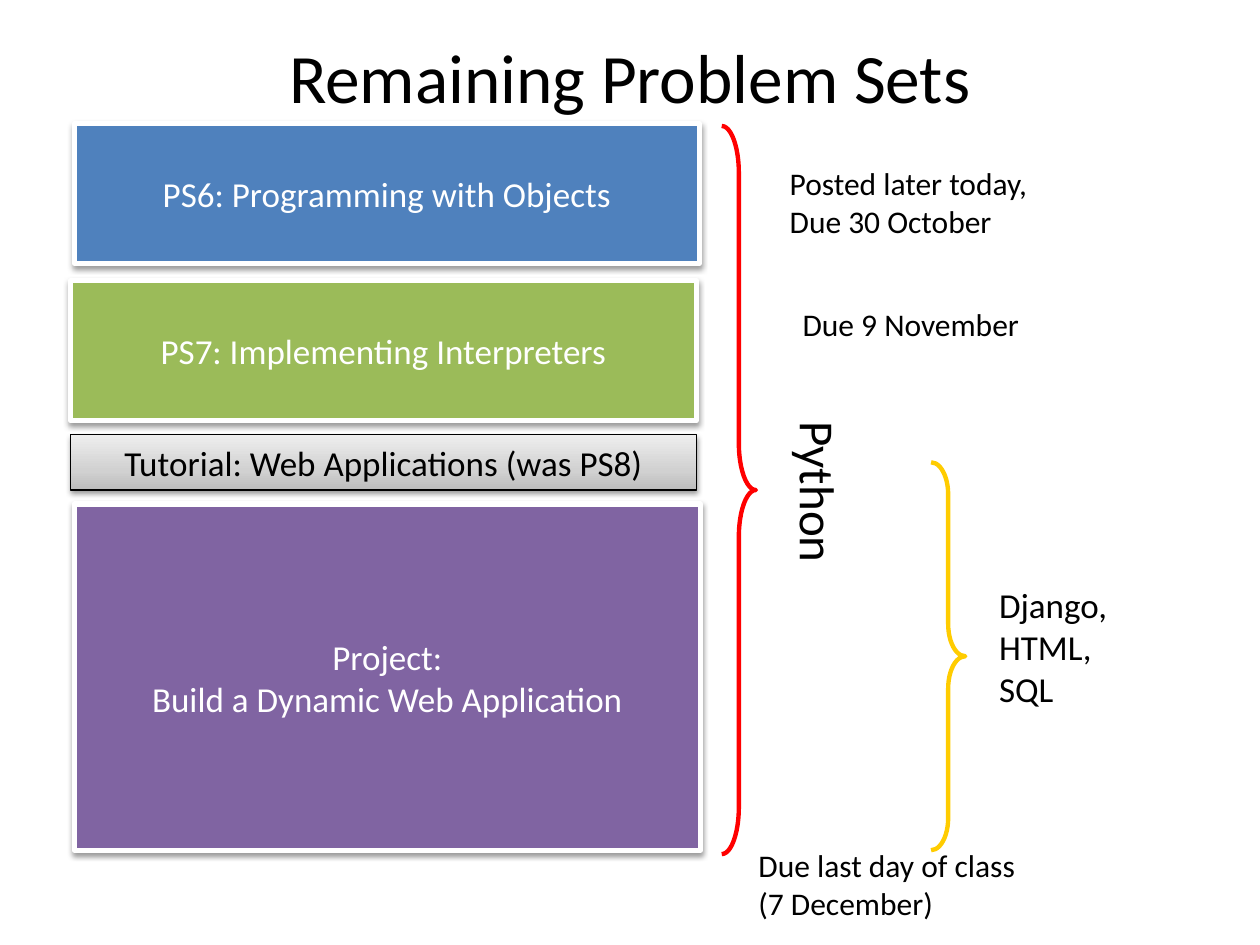
import pptx
import pptx.dml.color
import pptx.enum.shapes
import pptx.enum.text
import pptx.oxml
import pptx.util
from pptx.util import Cm

SHAPES = pptx.enum.shapes.MSO_SHAPE
ALIGN = pptx.enum.text.PP_ALIGN
ANCHOR = pptx.enum.text.MSO_ANCHOR
NAMESPACE = 'xmlns:a="http://schemas.openxmlformats.org/drawingml/2006/main"'

# Places are left, top, width, height in centimetres.
TITLE = ("Remaining Problem Sets", (1.27, 0.64, 22.86, 1.78))
GREY_STOPS = [(0, "BDBDBD"), (35, "D1D1D1"), (100, "EEEEEE")]
# lines, place, fill (colour or gradient stops), border colour, border width, text colour
BLOCKS = [
    (["PS6: Programming with Objects"], (1.5, 2.49, 12.6, 2.82),
     "4F81BD", "FFFFFF", 3, "FFFFFF"),
    (["PS7: Implementing Interpreters"], (1.42, 5.66, 12.62, 2.82),
     "9BBB59", "FFFFFF", 3, "FFFFFF"),
    (["Tutorial: Web Applications (was PS8)"], (1.42, 8.76, 12.62, 1.12),
     GREY_STOPS, "000000", 0.75, "000000"),
    (["Project:", "Build a Dynamic Web Application"], (1.5, 10.16, 12.62, 6.98),
     "8064A2", "FFFFFF", 3, "FFFFFF"),
]
# place, colour, curve size
BRACES = [
    ((14.55, 2.54, 0.69, 14.68), "FF0000", 1.37),
    ((18.77, 9.32, 0.69, 7.82), "FFCC00", 0.94),
]
# lines, place, text size, wrap, rotation, alignment
LABELS = [
    (["Python"], (14.81, 9.19, 3.4, 1.45), 28, False, 90, ALIGN.CENTER),
    (["Django, HTML, SQL"], (19.89, 11.63, 3.4, 2.82), 20, True, 0, ALIGN.LEFT),
    (["Due 9 November"], (15.93, 6.02, 4.93, 1.02), 18, False, 0, ALIGN.LEFT),
    (["Posted later today,", "Due 30 October"], (15.67, 3.18, 5.36, 1.8),
     18, False, 0, ALIGN.LEFT),
    (["Due last day of class (7 December)"], (15.04, 16.94, 5.72, 1.8),
     18, True, 0, ALIGN.LEFT),
]


def color(hex_value):
    return pptx.dml.color.RGBColor.from_string(hex_value)


def lengths(place):
    return [Cm(value) for value in place]


def write(shape, lines, size, hex_value, align, anchor, wrap=True):
    frame = shape.text_frame
    for name, value in {"word_wrap": wrap, "vertical_anchor": anchor,
                        "auto_size": pptx.enum.text.MSO_AUTO_SIZE.NONE}.items():
        setattr(frame, name, value)
    for index, line in enumerate(lines):
        para = frame.add_paragraph() if index else frame.paragraphs[0]
        para.alignment = align
        span = para.add_run()
        span.text = line
        for name, value in {"name": "Calibri", "size": pptx.util.Pt(size)}.items():
            setattr(span.font, name, value)
        span.font.color.rgb = color(hex_value)


def set_line(shape, hex_value, width):
    shape.line.color.rgb = color(hex_value)
    shape.line.width = pptx.util.Pt(width)


def fill_gradient(shape, stops):
    """Fill from the bottom edge upward."""
    shape.fill.gradient()
    shape.fill.gradient_angle = 90
    stop_list = shape.fill._xPr.find(pptx.oxml.ns.qn("a:gradFill")).gsLst
    for stop in list(stop_list):
        stop_list.remove(stop)
    for position, hex_value in stops:
        stop_list.append(pptx.oxml.parse_xml(
            f'<a:gs {NAMESPACE} pos="{position * 1000}"><a:srgbClr val="{hex_value}"/></a:gs>'))


def add_shadow(shape):
    shape.shadow.inherit = False
    effects = shape.element.spPr.find(pptx.oxml.ns.qn("a:effectLst"))
    effects.append(pptx.oxml.parse_xml(
        f'<a:outerShdw {NAMESPACE} blurRad="40000" dist="20000" dir="5400000" '
        'rotWithShape="0"><a:srgbClr val="000000"><a:alpha val="38000"/></a:srgbClr>'
        '</a:outerShdw>'))


def add_block(page, lines, place, fill, border, width, text_color):
    box = page.shapes.add_shape(SHAPES.RECTANGLE, *lengths(place))
    if isinstance(fill, str):
        box.fill.solid()
        box.fill.fore_color.rgb = color(fill)
    else:
        fill_gradient(box, fill)
    set_line(box, border, width)
    add_shadow(box)
    write(box, lines, 20, text_color, ALIGN.CENTER, ANCHOR.MIDDLE)


def add_brace(page, place, hex_value, curve):
    brace = page.shapes.add_shape(SHAPES.RIGHT_BRACE, *lengths(place))
    brace.adjustments[0] = curve
    brace.adjustments[1] = 0.5
    brace.fill.background()
    brace.shadow.inherit = False
    set_line(brace, hex_value, 2.5)


def add_label(page, lines, place, size, wrap, rotation, align):
    box = page.shapes.add_textbox(*lengths(place))
    box.rotation = rotation
    write(box, lines, size, "000000", align, ANCHOR.TOP, wrap)


def main():
    deck = pptx.Presentation()
    deck.slide_width, deck.slide_height = Cm(25.4), Cm(19.05)
    page = deck.slides.add_slide(deck.slide_layouts[5])
    text, place = TITLE
    title = page.shapes.title
    for name, value in zip(("left", "top", "width", "height"), lengths(place)):
        setattr(title, name, value)
    write(title, [text], 39.6, "000000", ALIGN.CENTER, ANCHOR.MIDDLE)
    for add, items in ((add_block, BLOCKS), (add_brace, BRACES), (add_label, LABELS)):
        for item in items:
            add(page, *item)
    deck.save("out.pptx")


if __name__ == "__main__":
    main()
